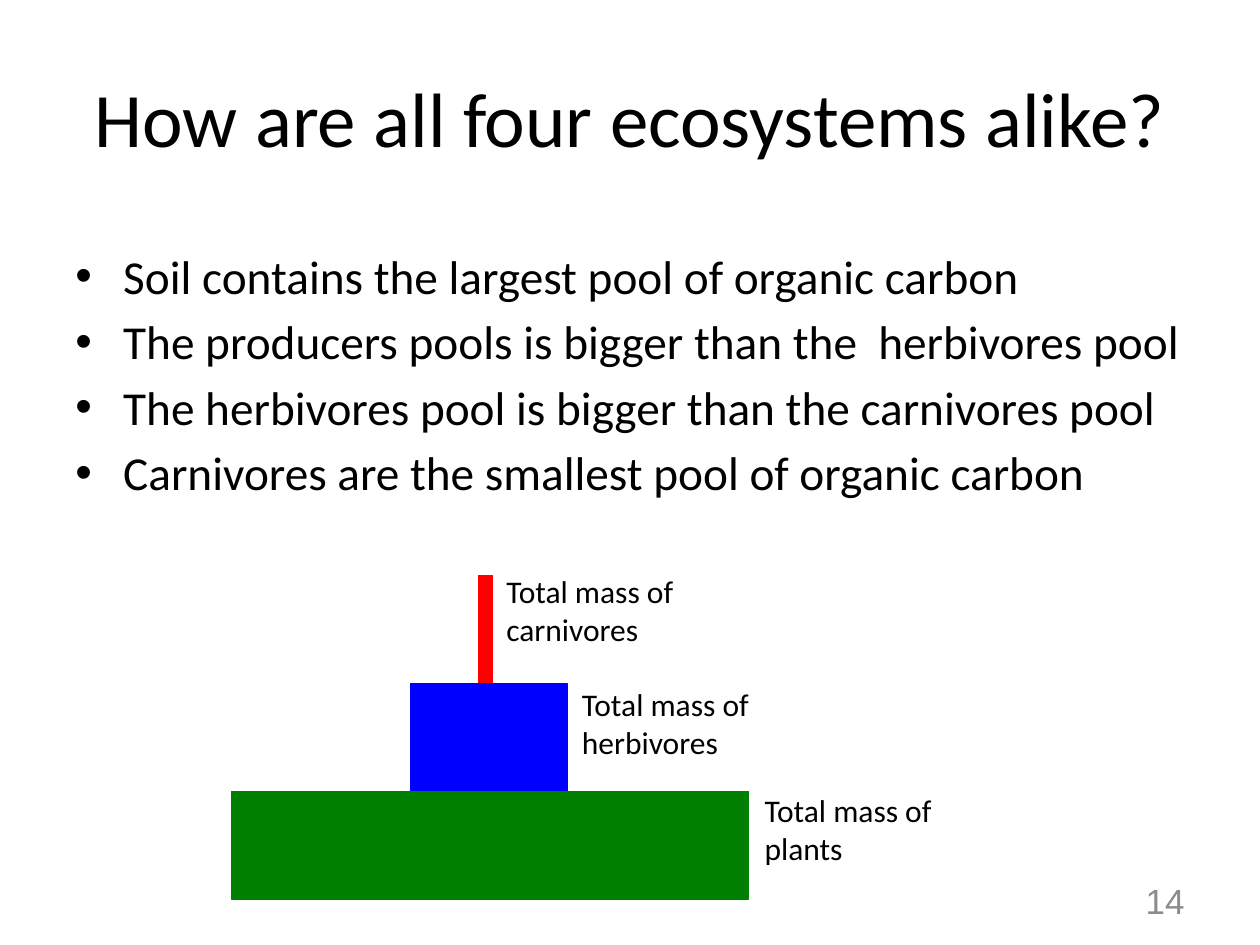
from dataclasses import dataclass

import pptx
import pptx.dml.color
import pptx.enum.shapes
import pptx.enum.text
import pptx.oxml
import pptx.oxml.ns
import pptx.util
from pptx.util import Inches

RGBColor = pptx.dml.color.RGBColor
PP_ALIGN = pptx.enum.text.PP_ALIGN
MSO_ANCHOR = pptx.enum.text.MSO_ANCHOR

BLACK = RGBColor(0x00, 0x00, 0x00)
GREEN = RGBColor(0x00, 0x80, 0x00)
BLUE = RGBColor(0x00, 0x00, 0xFF)
RED = RGBColor(0xFF, 0x00, 0x00)
GRAY = RGBColor(0x8C, 0x8C, 0x8C)

TIER_TOP = 4.57
TIER_HEIGHT = 0.855


@dataclass
class Tier:
    name: str
    color: RGBColor
    left: float
    width: float
    label_left: float
    label_top: float


TIERS = [
    Tier("carnivores", RED, 3.8, 0.11, 3.92, 4.49),
    Tier("herbivores", BLUE, 3.26, 1.24, 4.52, 5.39),
    Tier("plants", GREEN, 1.84, 4.1, 5.97, 6.23),
]

POINTS = [
    "Soil contains the largest pool of organic carbon",
    "The producers pools is bigger than the  herbivores pool",
    "The herbivores pool is bigger than the carnivores pool",
    "Carnivores are the smallest pool of organic carbon",
]


def place(sp, left: float, top: float, width: float, height: float) -> None:
    sp.left, sp.top = Inches(left), Inches(top)
    sp.width, sp.height = Inches(width), Inches(height)


def add_run(p, text: str, size: float, color: RGBColor = BLACK, font: str = "Calibri") -> None:
    r = p.add_run()
    r.text = text
    r.font.size = pptx.util.Pt(size)
    r.font.name = font
    r.font.color.rgb = color


def add_paragraph(tf, first: bool):
    return tf.paragraphs[0] if first else tf.add_paragraph()


def add_bullet(p) -> None:
    pPr = p._p.get_or_add_pPr()
    pPr.set("marL", str(Inches(0.38)))
    pPr.set("indent", str(Inches(-0.38)))
    ns = pptx.oxml.ns.nsdecls("a")
    pPr.append(pptx.oxml.parse_xml(f'<a:buFont {ns} typeface="Arial"/>'))
    pPr.append(pptx.oxml.parse_xml(f'<a:buChar {ns} char="•"/>'))


def add_title(s) -> None:
    sp = s.shapes.title
    place(sp, 0.5, 0.3, 9, 1.25)
    tf = sp.text_frame
    tf.vertical_anchor = MSO_ANCHOR.MIDDLE
    p = tf.paragraphs[0]
    p.alignment = PP_ALIGN.CENTER
    add_run(p, "How are all four ecosystems alike?", 44)


def add_points(s) -> None:
    sp = s.shapes.add_textbox(Inches(0.5), Inches(1.91), Inches(9.24), Inches(3.19))
    tf = sp.text_frame
    tf.word_wrap = True
    for i, text in enumerate(POINTS):
        p = add_paragraph(tf, i == 0)
        p.space_before = pptx.util.Pt(5)
        add_bullet(p)
        add_run(p, text, 27)


def add_block(shapes, tier: Tier, top: float) -> None:
    sp = shapes.add_shape(
        pptx.enum.shapes.MSO_SHAPE.RECTANGLE,
        Inches(tier.left), Inches(top), Inches(tier.width), Inches(TIER_HEIGHT),
    )
    sp.shadow.inherit = False
    sp.fill.solid()
    sp.fill.fore_color.rgb = tier.color
    sp.line.color.rgb = tier.color
    sp.line.width = pptx.util.Pt(0.75)


def add_label(shapes, tier: Tier) -> None:
    sp = shapes.add_textbox(
        Inches(tier.label_left), Inches(tier.label_top), Inches(1.6), Inches(0.71)
    )
    tf = sp.text_frame
    tf.word_wrap = False
    tf.auto_size = pptx.enum.text.MSO_AUTO_SIZE.SHAPE_TO_FIT_TEXT
    for i, text in enumerate(["Total mass of", tier.name]):
        add_run(add_paragraph(tf, i == 0), text, 18)


def add_pyramid(s) -> None:
    group = s.shapes.add_group_shape()
    for i, tier in enumerate(TIERS):
        add_block(group.shapes, tier, TIER_TOP + i * TIER_HEIGHT)
    for tier in TIERS:
        add_label(group.shapes, tier)


def add_page_number(s) -> None:
    sp = s.shapes.add_textbox(Inches(7.17), Inches(6.95), Inches(2.33), Inches(0.4))
    tf = sp.text_frame
    tf.word_wrap = True
    tf.vertical_anchor = MSO_ANCHOR.MIDDLE
    p = tf.paragraphs[0]
    p.alignment = PP_ALIGN.RIGHT
    add_run(p, "14", 20, GRAY, "Arial")


def main() -> None:
    prs = pptx.Presentation()
    prs.slide_width, prs.slide_height = Inches(10), Inches(7.5)
    s = prs.slides.add_slide(prs.slide_layouts[5])
    add_title(s)
    add_points(s)
    add_pyramid(s)
    add_page_number(s)
    prs.save("out.pptx")


if __name__ == "__main__":
    main()
